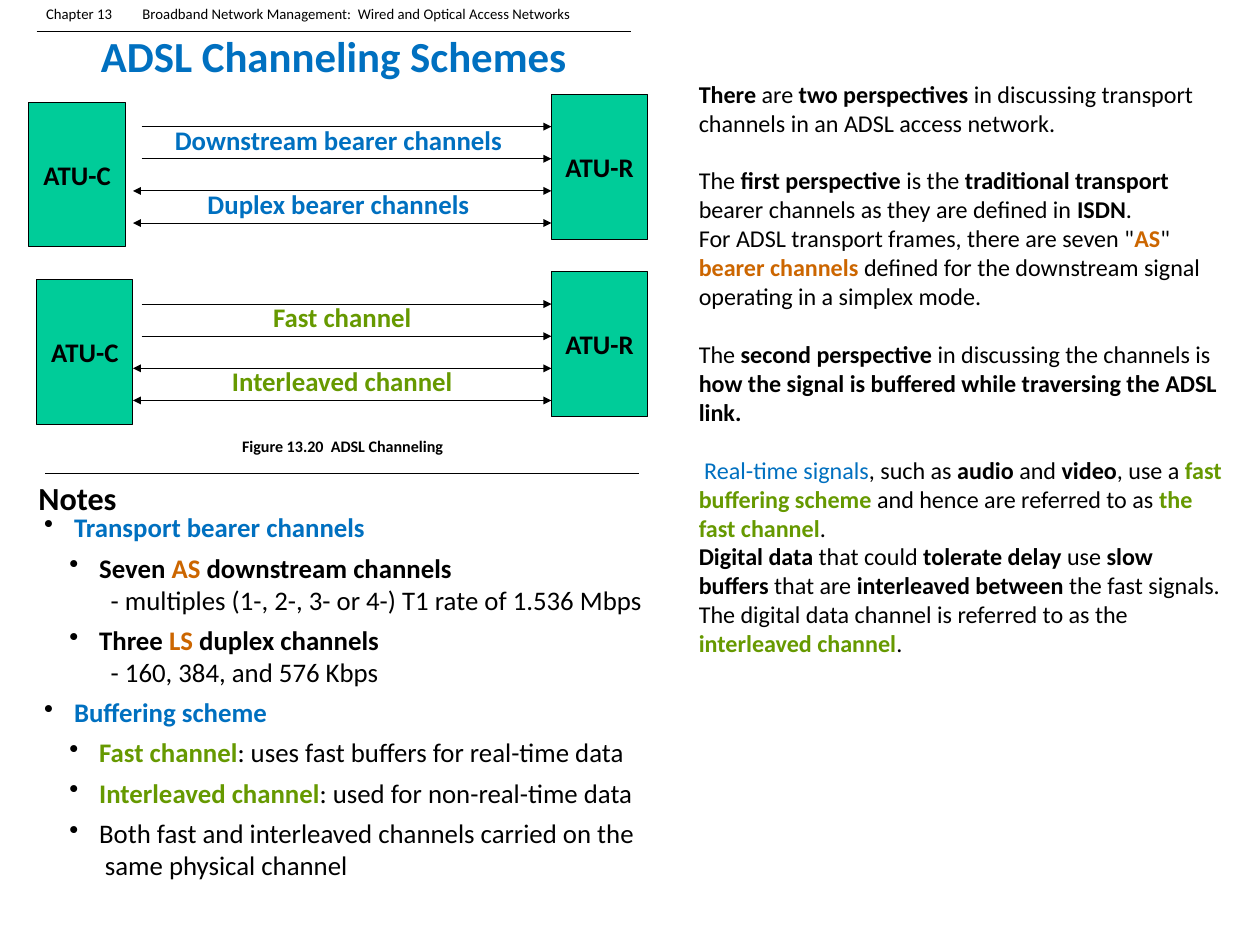
from lxml.etree import SubElement
from pptx import Presentation
from pptx.dml.color import RGBColor
from pptx.enum.shapes import MSO_CONNECTOR, MSO_SHAPE
from pptx.enum.text import MSO_ANCHOR, PP_ALIGN
from pptx.oxml import parse_xml
from pptx.oxml.ns import nsdecls, qn
from pptx.util import Inches, Pt

BLACK, BLUE, ORANGE, GREEN, TEAL = "000000", "0070C0", "CC6600", "669900", "00CC99"
color = RGBColor.from_string

deck = Presentation()
deck.slide_width, deck.slide_height = Inches(13.07), Inches(9.8)
page = deck.slides.add_slide(deck.slide_layouts[6])


def write(box, paragraphs, size, tint=BLACK, bold=False, align=PP_ALIGN.LEFT, anchor=MSO_ANCHOR.TOP):
    frame = box.text_frame
    frame.word_wrap = True
    frame.vertical_anchor = anchor
    for index, spans in enumerate(paragraphs):
        para = frame.paragraphs[0] if index == 0 else frame.add_paragraph()
        para.alignment = align
        para.font.name = "Calibri"
        para.font.size = Pt(size)
        para.font.bold = bold
        para.font.color.rgb = color(tint)
        for words, *style in spans:
            span = para.add_run()
            span.text = words
            if style:
                span.font.bold = True
                span.font.color.rgb = color(style[0])
    return frame.paragraphs


def draw_line(left, right, y, width, ends=()):
    line = page.shapes.add_connector(
        MSO_CONNECTOR.STRAIGHT, Inches(left), Inches(y), Inches(right), Inches(y))
    line.line.color.rgb = color(BLACK)
    line.line.width = Pt(width)
    for end in ends:
        SubElement(line.line._get_or_add_ln(), qn(f"a:{end}"), type="triangle")
    SubElement(line._element.spPr, qn("a:effectLst"))


draw_line(0.38, 6.55, 0.33, 1)
draw_line(0.47, 6.63, 4.91, 1)

headings = [
    ("Chapter 13\tBroadband Network Management:  Wired and Optical Access Networks",
     0.38, 0, 6.23, 0.29, 11, BLACK, False, PP_ALIGN.LEFT, MSO_ANCHOR.TOP),
    ("ADSL Channeling Schemes",
     0.38, 0.32, 6.17, 0.5, 32, BLUE, True, PP_ALIGN.CENTER, MSO_ANCHOR.MIDDLE),
    ("Figure 13.20  ADSL Channeling",
     0.47, 4.48, 6.17, 0.3, 12, BLACK, True, PP_ALIGN.CENTER, MSO_ANCHOR.TOP),
    ("Notes",
     0.3, 4.91, 1.17, 0.5, 24, BLACK, True, PP_ALIGN.LEFT, MSO_ANCHOR.TOP),
]
for words, left, top, width, height, *style in headings:
    box = page.shapes.add_textbox(Inches(left), Inches(top), Inches(width), Inches(height))
    write(box, [[(words,)]], *style)

remote_left = 5.72
schemes = [
    (0.98, 0.3, BLUE, ["Downstream bearer channels", "Duplex bearer channels"]),
    (2.82, 0.38, GREEN, ["Fast channel", "Interleaved channel"]),
]
for top, central_left, tint, labels in schemes:
    for name, left, unit_top in [("ATU-C", central_left, top + 0.08), ("ATU-R", remote_left, top)]:
        unit = page.shapes.add_shape(
            MSO_SHAPE.RECTANGLE, Inches(left), Inches(unit_top), Inches(1), Inches(1.5))
        unit.shadow.inherit = False
        unit.fill.solid()
        unit.fill.fore_color.rgb = color(TEAL)
        unit.line.color.rgb = color(BLACK)
        unit.line.width = Pt(0.75)
        write(unit, [[(name,)]], 20, BLACK, True, PP_ALIGN.CENTER, MSO_ANCHOR.MIDDLE)
    for row in range(4):
        left, ends = (1.47, ["tailEnd"]) if row < 2 else (1.38, ["headEnd", "tailEnd"])
        draw_line(left, remote_left, top + (row + 1) / 3, 0.75, ends)
    for row, label in enumerate(labels):
        left = central_left + 1
        box = page.shapes.add_textbox(
            Inches(left), Inches(top + 0.25 + row * 2 / 3), Inches(remote_left - left), Inches(0.44))
        write(box, [[(label,)]], 20, tint, True, PP_ALIGN.CENTER)

notes = [
    (0.31, True, 6, [("Transport bearer channels", BLUE)]),
    (0.57, True, 0, [("Seven ", BLACK), ("AS ", ORANGE), ("downstream channels", BLACK)]),
    (0.69, False, 6, [("- multiples (1-, 2-, 3- or 4-) T1 rate of 1.536 Mbps",)]),
    (0.57, True, 0, [("Three ", BLACK), ("LS ", ORANGE), ("duplex channels", BLACK)]),
    (0.69, False, 6, [("- 160, 384, and 576 Kbps",)]),
    (0.31, True, 6, [("Buffering scheme", BLUE)]),
    (0.57, True, 6, [("Fast channel", GREEN), (": uses fast buffers for real-time data",)]),
    (0.57, True, 6, [("Interleaved channel", GREEN), (": used for non-real-time data",)]),
    (0.57, True, 0, [("Both fast and interleaved channels carried on the",)]),
    (0.63, False, 6, [("same physical channel",)]),
]
box = page.shapes.add_textbox(Inches(0.36), Inches(5.25), Inches(7.85), Inches(4.55))
paragraphs = write(box, [spans for *_, spans in notes], 20)
for para, (margin, bulleted, gap, _) in zip(paragraphs, notes):
    para.space_after = Pt(gap)
    properties = para._p.get_or_add_pPr()
    properties.set("marL", str(Inches(margin)))
    properties.set("indent", str(Inches(-0.31 if bulleted else 0)))
    if bulleted:
        bullet = parse_xml(f'<a:buChar {nsdecls("a")} char="•"/>')
        tint = parse_xml(f'<a:buClr {nsdecls("a")}><a:srgbClr val="{BLACK}"/></a:buClr>')
        defaults = properties.find(qn("a:defRPr"))
        defaults.addprevious(tint)
        defaults.addprevious(bullet)

discussion = [
    (0, [("There ", BLACK), ("are ",), ("two perspectives ", BLACK),
         ("in discussing transport channels in an ADSL access network.",)]),
    (21.6, [("The ",), ("first perspective ", BLACK), ("is the ",), ("traditional transport ", BLACK),
            ("bearer channels as they are defined in ",), ("ISDN", BLACK), (".",)]),
    (0, [('For ADSL transport frames, there are seven "',), ("AS", ORANGE), ('" ',),
         ("bearer channels ", ORANGE),
         ("defined for the downstream signal operating in a simplex mode.",)]),
    (21.6, [("The ",), ("second perspective ", BLACK), ("in discussing the channels is ",),
            ("how the signal is buffered while traversing the ADSL link.", BLACK)]),
    (21.6, [(" ",), ("Real-time signals", BLUE), (", such as ",), ("audio", BLACK), (" and ",),
            ("video", BLACK), (", use a ",), ("fast buffering scheme ", GREEN),
            ("and hence are referred to as ",), ("the fast channel", GREEN), (".",)]),
    (0, [("Digital data ", BLACK), ("that could ",), ("tolerate delay ", BLACK), ("use ",),
         ("slow buffers ", BLACK), ("that are ",), ("interleaved between ", BLACK),
         ("the fast signals. The digital data channel is referred to as the ",),
         ("interleaved channel", GREEN), (".",)]),
]
box = page.shapes.add_textbox(Inches(7.15), Inches(0.77), Inches(5.68), Inches(6.16))
paragraphs = write(box, [spans for _, spans in discussion], 18)
for para, (gap, _) in zip(paragraphs, discussion):
    para.space_before = Pt(gap)
paragraphs[4].runs[1].font.bold = False

deck.save("out.pptx")
